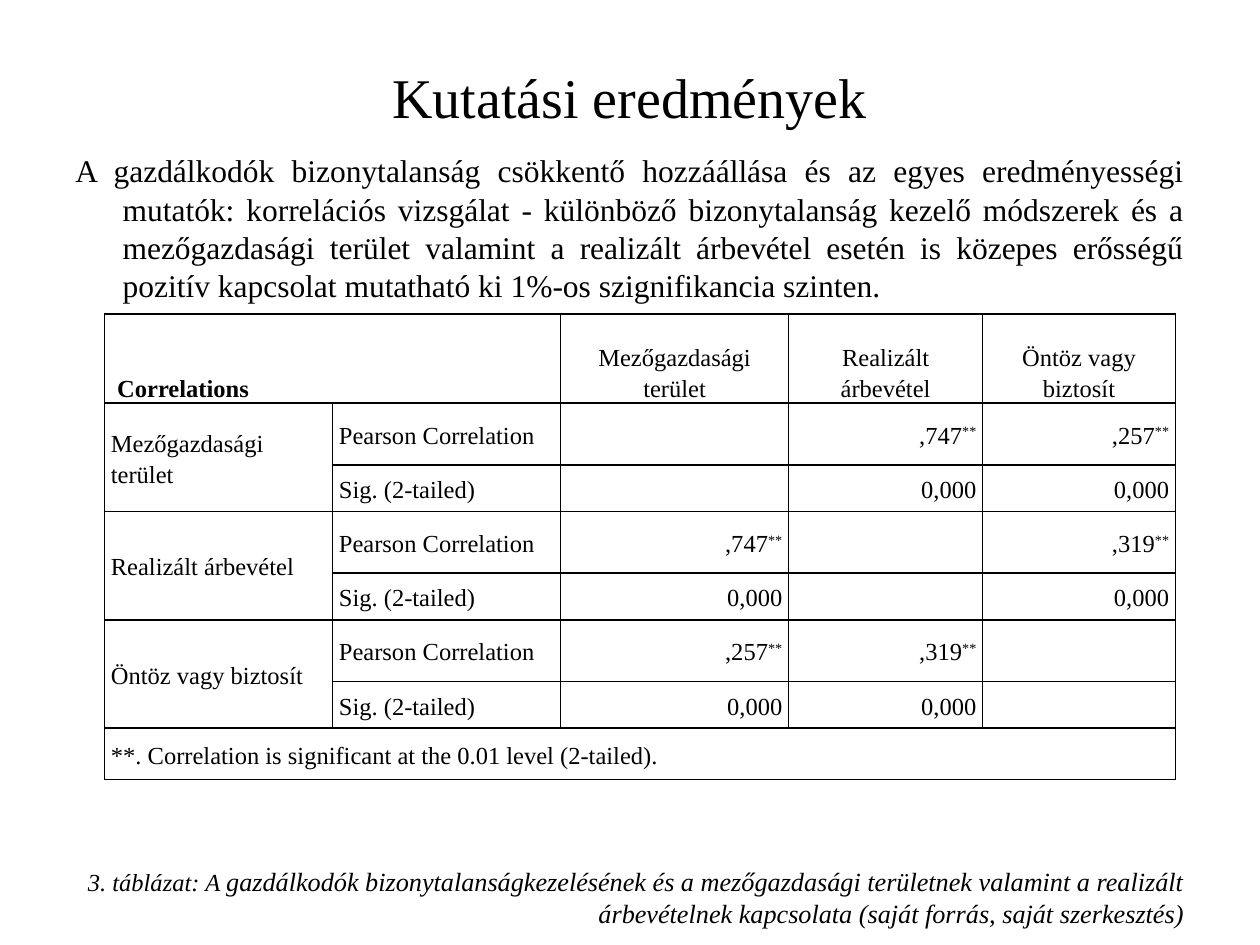
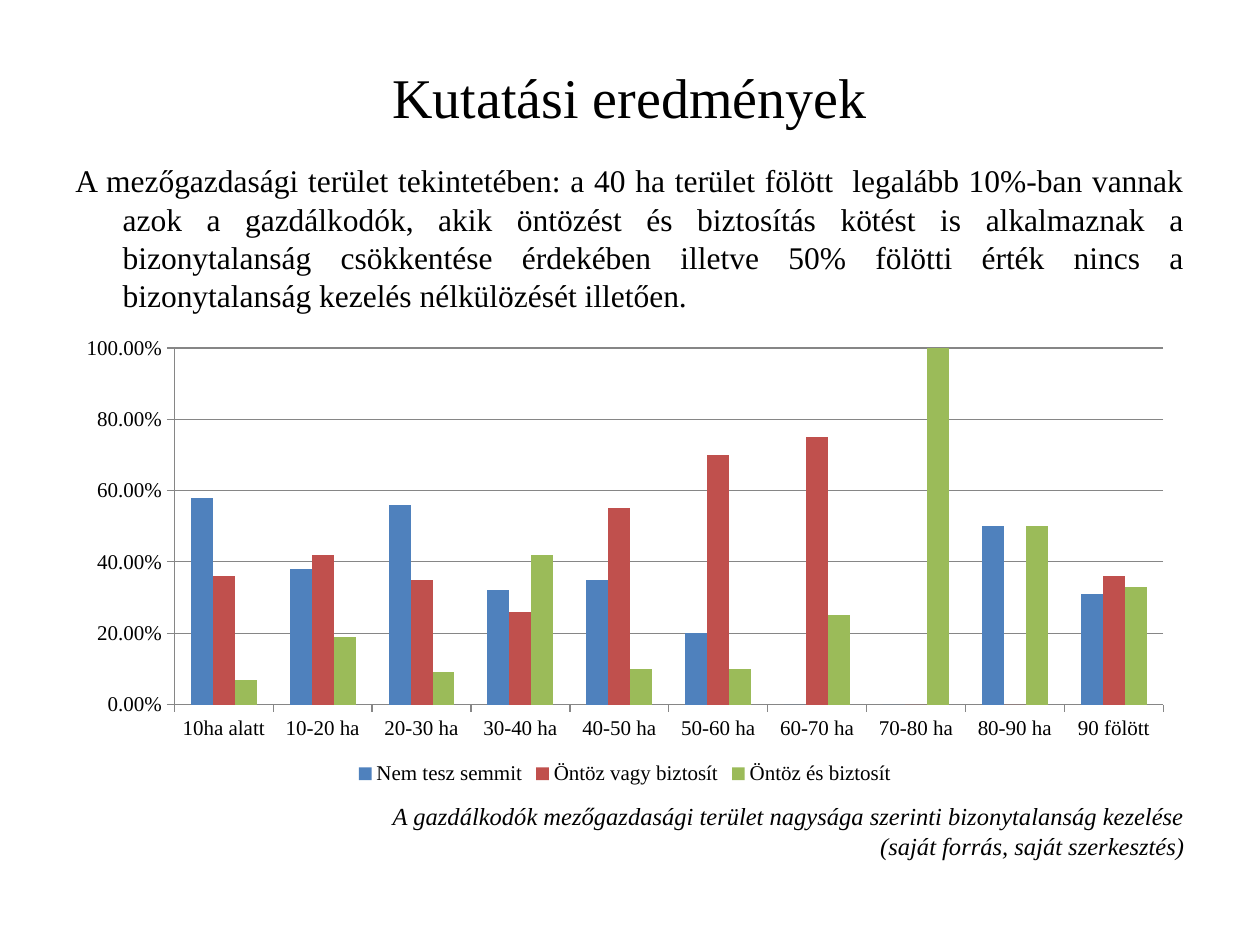
from dataclasses import dataclass

import pptx
import pptx.chart.data
import pptx.dml.color
import pptx.enum.chart
import pptx.enum.text
import pptx.oxml
import pptx.oxml.ns
import pptx.util

Align = pptx.enum.text.PP_ALIGN
Anchor = pptx.enum.text.MSO_ANCHOR
Pt = pptx.util.Pt

WIDTH = pptx.util.Inches(10)
HEIGHT = pptx.util.Inches(7.5)
COLUMNS, ROWS = 100, 75

FONT = "Times New Roman"
BLACK = pptx.dml.color.RGBColor(0x00, 0x00, 0x00)
WHITE = pptx.dml.color.RGBColor(0xFF, 0xFF, 0xFF)
GREY = pptx.dml.color.RGBColor(0x86, 0x86, 0x86)
BLUE = pptx.dml.color.RGBColor(0x4F, 0x81, 0xBD)
RED = pptx.dml.color.RGBColor(0xC0, 0x50, 0x4D)
GREEN = pptx.dml.color.RGBColor(0x9B, 0xBB, 0x59)

TITLE = "Kutatási eredmények"
LINE_HEIGHT = 1.21
HANGING_INDENT = 3.75
CELL_INSET = 0.5
CELL_SIZE = 14
CHART_SIZE = 12


@dataclass(frozen=True)
class Area:
    """A place on the slide, in grid columns and rows."""
    left: float
    top: float
    width: float
    height: float

    def lengths(self) -> tuple[int, int, int, int]:
        return across(self.left), down(self.top), across(self.width), down(self.height)


@dataclass(frozen=True)
class Span:
    text: str
    size: float
    bold: bool = False
    italic: bool = False
    superscript: bool = False


@dataclass(frozen=True)
class TextBlock:
    area: Area
    spans: tuple[Span, ...]
    align: Align
    anchor: Anchor = Anchor.TOP
    hanging: bool = True


@dataclass(frozen=True)
class Series:
    name: str
    color: pptx.dml.color.RGBColor
    values: tuple[float, ...]


TITLE_BLOCK = TextBlock(Area(5, 3, 90, 9.3), (Span(TITLE, 32),),
                        Align.CENTER, Anchor.MIDDLE, hanging=False)

CORRELATION_BLOCKS = (
    TextBlock(Area(5, 11.5, 90, 13), (Span(
        "A gazdálkodók bizonytalanság csökkentő hozzáállása és az egyes eredményességi mutatók: "
        "korrelációs vizsgálat - különböző bizonytalanság kezelő módszerek és a mezőgazdasági "
        "terület valamint a realizált árbevétel esetén is közepes erősségű pozitív kapcsolat "
        "mutatható ki 1%-os szignifikancia szinten.", 18),), Align.JUSTIFY),
    TextBlock(Area(5, 68.2, 90, 6), (
        Span("3. táblázat: A ", 14, italic=True),
        Span("gazdálkodók bizonytalanságkezelésének és a mezőgazdasági területnek valamint a "
             "realizált árbevételnek kapcsolata (saját forrás, saját szerkesztés)",
             15, italic=True)), Align.RIGHT),
)

LAND_SIZE_BLOCKS = (
    TextBlock(Area(5, 12.3, 90, 13), (Span(
        "A mezőgazdasági terület tekintetében: a 40 ha terület fölött  legalább 10%-ban vannak "
        "azok a gazdálkodók, akik öntözést és biztosítás kötést is alkalmaznak a bizonytalanság "
        "csökkentése érdekében illetve 50% fölötti érték nincs a bizonytalanság kezelés "
        "nélkülözését illetően.", 18),), Align.JUSTIFY),
    TextBlock(Area(5, 63.1, 90, 6), (Span(
        "A gazdálkodók mezőgazdasági terület nagysága szerinti bizonytalanság kezelése\n"
        "(saját forrás, saját szerkesztés)", 14, italic=True),), Align.RIGHT),
)

VARIABLES = ("Mezőgazdasági terület", "Realizált árbevétel", "Öntöz vagy biztosít")
CORRELATIONS = {(0, 1): ",747", (0, 2): ",257", (1, 2): ",319"}
SIGNIFICANCE = "0,000"
TABLE_NOTE = "**. Correlation is significant at the 0.01 level (2-tailed)."
TABLE_AREA = Area(8.3, 24.9, 85, 37)
TABLE_COLUMNS = (18.1, 18.1, 18.1, 15.4, 15.3)
TABLE_ROWS = (7.1, *(4.9, 3.7) * len(VARIABLES), 4.1)

CHART_AREA = Area(5.1, 26, 89, 36.7)
LAND_SIZES = ("10ha alatt", *(f"{size}-{size + 10} ha" for size in range(10, 90, 10)),
              "90 fölött")
SERIES = (
    Series("Nem tesz semmit", BLUE, (0.58, 0.38, 0.56, 0.32, 0.35, 0.2, 0, 0, 0.5, 0.31)),
    Series("Öntöz vagy biztosít", RED, (0.36, 0.42, 0.35, 0.26, 0.55, 0.7, 0.75, 0, 0, 0.36)),
    Series("Öntöz és biztosít", GREEN, (0.07, 0.19, 0.09, 0.42, 0.1, 0.1, 0.25, 1, 0.5, 0.33)),
)


def across(columns: float) -> int:
    return round(WIDTH * columns / COLUMNS)


def down(rows: float) -> int:
    return round(HEIGHT * rows / ROWS)


def set_values(target, values: dict) -> None:
    for name, value in values.items():
        setattr(target, name, value)


def write_spans(paragraph, spans: tuple[Span, ...]) -> None:
    for span in spans:
        for index, line in enumerate(span.text.split("\n")):
            if index:
                paragraph.add_line_break()
            run = paragraph.add_run()
            run.text = line
            set_values(run.font, {"name": FONT, "size": Pt(span.size),
                                  "bold": span.bold, "italic": span.italic})
            run.font.color.rgb = BLACK
            if span.superscript:
                run._r.get_or_add_rPr().set("baseline", "30000")


def add_text(slide, block: TextBlock) -> None:
    frame = slide.shapes.add_textbox(*block.area.lengths()).text_frame
    set_values(frame, {"word_wrap": True, "vertical_anchor": block.anchor})
    paragraph = frame.paragraphs[0]
    paragraph.alignment = block.align
    if block.hanging:
        largest = max(span.size for span in block.spans)
        paragraph.line_spacing = Pt(round(largest * LINE_HEIGHT, 1))
        properties = paragraph._p.get_or_add_pPr()
        properties.set("marL", str(across(HANGING_INDENT)))
        properties.set("indent", str(-across(HANGING_INDENT)))
    write_spans(paragraph, block.spans)


def add_borders(cell) -> None:
    properties = cell._tc.get_or_add_tcPr()
    for index, side in enumerate("LRTB"):
        properties.insert(index, pptx.oxml.parse_xml(
            f'<a:ln{side} {pptx.oxml.ns.nsdecls("a")} w="{Pt(1)}">'
            f'<a:solidFill><a:srgbClr val="{BLACK}"/></a:solidFill></a:ln{side}>'))


def write_cell(cell, text: str, align: Align = Align.LEFT, anchor: Anchor = Anchor.MIDDLE,
               bold: bool = False, starred: bool = False) -> None:
    cell.vertical_anchor = anchor
    paragraph = cell.text_frame.paragraphs[0]
    set_values(paragraph, {"alignment": align, "line_spacing": 1.15})
    spans = [Span(text, CELL_SIZE, bold=bold)]
    if starred:
        spans.append(Span("**", CELL_SIZE, superscript=True))
    write_spans(paragraph, tuple(spans))


def add_correlation_table(slide) -> None:
    table = slide.shapes.add_table(len(TABLE_ROWS), len(TABLE_COLUMNS),
                                   *TABLE_AREA.lengths()).table
    set_values(table, {"first_row": False, "horz_banding": False})
    for column, width in zip(table.columns, TABLE_COLUMNS):
        column.width = across(width)
    for row, height in zip(table.rows, TABLE_ROWS):
        row.height = down(height)
    inset = across(CELL_INSET)
    for cell in table.iter_cells():
        cell.fill.solid()
        cell.fill.fore_color.rgb = WHITE
        set_values(cell, {"margin_left": inset, "margin_right": inset,
                          "margin_top": 0, "margin_bottom": 0})
        add_borders(cell)

    heading = table.cell(0, 0)
    heading.merge(table.cell(0, 1))
    heading.margin_left = 2 * inset
    write_cell(heading, "Correlations", anchor=Anchor.BOTTOM, bold=True)
    for index, variable in enumerate(VARIABLES):
        write_cell(table.cell(0, index + 2), variable, Align.CENTER, Anchor.BOTTOM)
        top = 1 + 2 * index
        label = table.cell(top, 0)
        label.merge(table.cell(top + 1, 0))
        write_cell(label, variable)
        write_cell(table.cell(top, 1), "Pearson Correlation")
        write_cell(table.cell(top + 1, 1), "Sig. (2-tailed)")
        for other in range(len(VARIABLES)):
            if other != index:
                value = CORRELATIONS[min(index, other), max(index, other)]
                write_cell(table.cell(top, other + 2), value, Align.RIGHT, starred=True)
                write_cell(table.cell(top + 1, other + 2), SIGNIFICANCE, Align.RIGHT)
    last = len(TABLE_ROWS) - 1
    note = table.cell(last, 0)
    note.merge(table.cell(last, len(TABLE_COLUMNS) - 1))
    write_cell(note, TABLE_NOTE)


def add_land_size_chart(slide) -> None:
    data = pptx.chart.data.CategoryChartData(number_format="0.00%")
    data.categories = LAND_SIZES
    for series in SERIES:
        data.add_series(series.name, series.values)
    chart = slide.shapes.add_chart(pptx.enum.chart.XL_CHART_TYPE.COLUMN_CLUSTERED,
                                   *CHART_AREA.lengths(), data).chart
    set_values(chart, {"has_title": False, "has_legend": True})
    set_values(chart.font, {"name": FONT, "size": Pt(CHART_SIZE)})
    chart.font.color.rgb = BLACK
    set_values(chart.legend, {"position": pptx.enum.chart.XL_LEGEND_POSITION.BOTTOM,
                              "include_in_layout": False})

    plot = chart.plots[0]
    set_values(plot, {"gap_width": 150, "overlap": 0, "vary_by_categories": False})
    for drawn, series in zip(plot.series, SERIES):
        drawn.format.fill.solid()
        drawn.format.fill.fore_color.rgb = series.color

    value_axis = chart.value_axis
    set_values(value_axis, {"minimum_scale": 0, "maximum_scale": 1, "major_unit": 0.2,
                            "has_major_gridlines": True})
    set_values(value_axis.tick_labels, {"number_format": "0.00%",
                                        "number_format_is_linked": False})
    for axis in (chart.category_axis, value_axis):
        axis.major_tick_mark = pptx.enum.chart.XL_TICK_MARK.OUTSIDE
    for lined in (chart.category_axis, value_axis, value_axis.major_gridlines):
        lined.format.line.color.rgb = GREY
        lined.format.line.width = Pt(0.75)


def add_result_slide(presentation, blocks: tuple[TextBlock, ...]):
    """Add a blank slide with the shared title and the given texts."""
    slide = presentation.slides.add_slide(presentation.slide_layouts[6])
    for block in (TITLE_BLOCK, *blocks):
        add_text(slide, block)
    return slide


def main() -> None:
    presentation = pptx.Presentation()
    set_values(presentation, {"slide_width": WIDTH, "slide_height": HEIGHT})
    add_correlation_table(add_result_slide(presentation, CORRELATION_BLOCKS))
    add_land_size_chart(add_result_slide(presentation, LAND_SIZE_BLOCKS))
    presentation.save("out.pptx")


if __name__ == "__main__":
    main()
